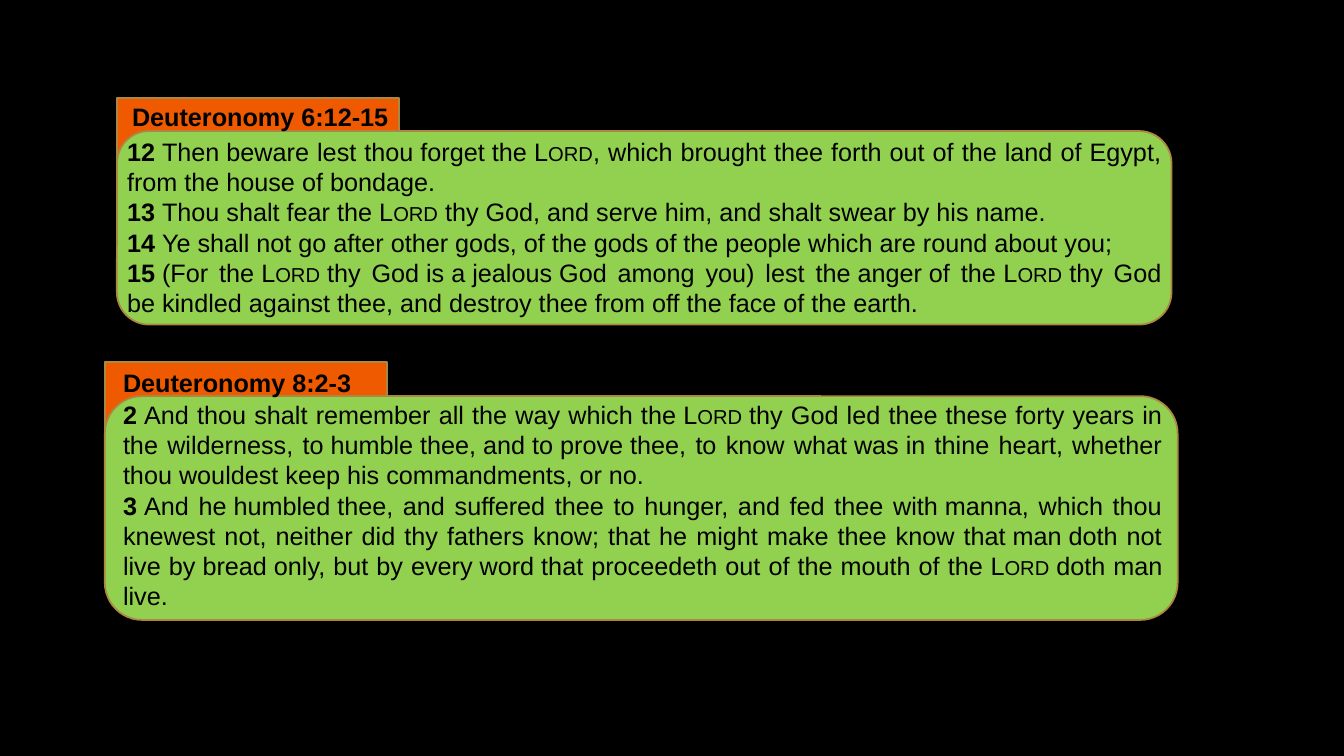
import dataclasses
import pptx
import pptx.dml.color
import pptx.enum.shapes
import pptx.enum.text
import pptx.oxml
import pptx.oxml.ns
import pptx.util

Inches = pptx.util.Inches
Shape = pptx.enum.shapes.MSO_SHAPE
Align = pptx.enum.text.PP_ALIGN

COLORS = {"back": "000000", "text": "000000", "tab": "EF5A01",
          "panel": "92D050", "line": "AC8741"}
HARD = chr(160)  # written as "_" in the wording below
LORD = "Lord"


@dataclasses.dataclass
class Box:
    left: float
    top: float
    width: float
    height: float

    def lengths(self) -> list:
        return [Inches(n) for n in dataclasses.astuple(self)]


@dataclasses.dataclass
class Verse:
    number: str
    words: str


@dataclasses.dataclass
class Passage:
    title: str
    tab: Box
    panel: Box
    head: Box
    body: Box
    verses: list[Verse]


PASSAGES = [
    Passage(
        "_Deuteronomy 6:12-15",
        tab=Box(1.16, 0.97, 2.8, 0.82), panel=Box(1.16, 1.3, 10.46, 1.92),
        head=Box(1.14, 0.96, 2.84, 0.4), body=Box(1.16, 1.3, 10.46, 1.92),
        verses=[
            Verse("12", "Then_beware lest thou_forget_the_Lord, which brought thee "
                  "forth out of the land of Egypt, from the house of bondage."),
            Verse("13", "Thou shalt_fear_the_Lord_thy God, and_serve_him, and "
                  "shalt_swear_by his name."),
            Verse("14", "Ye shall not go after_other_gods, of the gods of the people "
                  "which_are_round about you;"),
            Verse("15", "(For the_Lord_thy God_is_a_jealous_God among you) lest "
                  "the_anger_of the_Lord_thy God be kindled against thee, and "
                  "destroy thee from off the face of the earth."),
        ]),
    Passage(
        "Deuteronomy 8:2-3",
        tab=Box(1.04, 3.59, 2.8, 0.82), panel=Box(1.04, 3.93, 10.64, 2.22),
        head=Box(1.12, 3.59, 2.49, 0.4), body=Box(1.12, 3.91, 10.51, 2.22),
        verses=[
            Verse("2", "And thou shalt remember all the way which the_Lord_thy God "
                  "led thee these forty years in the wilderness, to_humble_thee,"
                  "_and_to_prove_thee, to know what_was_in thine heart, whether "
                  "thou wouldest keep his commandments, or no."),
            Verse("3", "And he_humbled_thee, and suffered thee to hunger, and fed "
                  "thee with_manna, which thou knewest not, neither did thy fathers "
                  "know; that he might make thee know that_man_doth not live "
                  "by_bread_only, but by every_word_that proceedeth out of the mouth "
                  "of the_Lord_doth man live."),
        ]),
]


def color(name: str) -> pptx.dml.color.RGBColor:
    return pptx.dml.color.RGBColor.from_string(COLORS[name])


def draw_shape(slide, kind: Shape, box: Box, fill: str) -> None:
    shape = slide.shapes.add_shape(kind, *box.lengths())
    shape.shadow.inherit = False
    shape.fill.solid()
    shape.fill.fore_color.rgb = color(fill)
    shape.line.color.rgb = color("line")
    shape.line.width = pptx.util.Pt(1.25)


def place_frame(slide, holder, box: Box, wrap: bool):
    """Move a placeholder to the box, in front of the shapes drawn so far."""
    slide.shapes.element.append(holder.element)
    holder.left, holder.top, holder.width, holder.height = box.lengths()
    frame = holder.text_frame
    frame.word_wrap = wrap
    frame.vertical_anchor = pptx.enum.text.MSO_ANCHOR.TOP
    frame.auto_size = pptx.enum.text.MSO_AUTO_SIZE.SHAPE_TO_FIT_TEXT
    return frame


def format_line(line, align: Align) -> None:
    """Clear the bullet, indent and gap that the placeholder gives."""
    props = line._p.get_or_add_pPr()
    props.set("marL", "0")
    props.set("indent", "0")
    props.append(pptx.oxml.parse_xml(
        f"<a:buNone {pptx.oxml.ns.nsdecls('a')}/>"))
    line.alignment = align
    line.space_before = pptx.util.Pt(0)


def add_run(line, text: str, bold: bool = False) -> None:
    run = line.add_run()
    run.text = text.replace("_", HARD)
    run.font.name = "Arial"
    run.font.size = pptx.util.Pt(18)
    run.font.bold = bold
    run.font.color.rgb = color("text")
    if text == LORD:
        run._r.get_or_add_rPr().set("cap", "small")


def add_verse(line, verse: Verse) -> None:
    format_line(line, Align.JUSTIFY)
    add_run(line, verse.number + "_", bold=True)
    first, *rest = verse.words.split(LORD)
    add_run(line, first)
    for part in rest:
        add_run(line, LORD)
        add_run(line, part)


def draw_passage(slide, passage: Passage, head, body) -> None:
    draw_shape(slide, Shape.RECTANGLE, passage.tab, "tab")
    draw_shape(slide, Shape.ROUNDED_RECTANGLE, passage.panel, "panel")
    frame = place_frame(slide, body, passage.body, wrap=True)
    for place, verse in enumerate(passage.verses):
        line = frame.add_paragraph() if place else frame.paragraphs[0]
        add_verse(line, verse)
    title = place_frame(slide, head, passage.head, wrap=False).paragraphs[0]
    format_line(title, Align.LEFT)
    add_run(title, passage.title, bold=True)


def main() -> None:
    deck = pptx.Presentation()
    deck.slide_width, deck.slide_height = Inches(13.33), Inches(7.5)
    layout = deck.slide_layouts.get_by_name("Comparison")
    slide = deck.slides.add_slide(layout)
    slide.background.fill.solid()
    slide.background.fill.fore_color.rgb = color("back")

    title, *holders = slide.placeholders
    slide.shapes.element.remove(title.element)
    for passage, head, body in zip(PASSAGES, holders[::2], holders[1::2]):
        draw_passage(slide, passage, head, body)
    deck.save("out.pptx")


if __name__ == "__main__":
    main()
